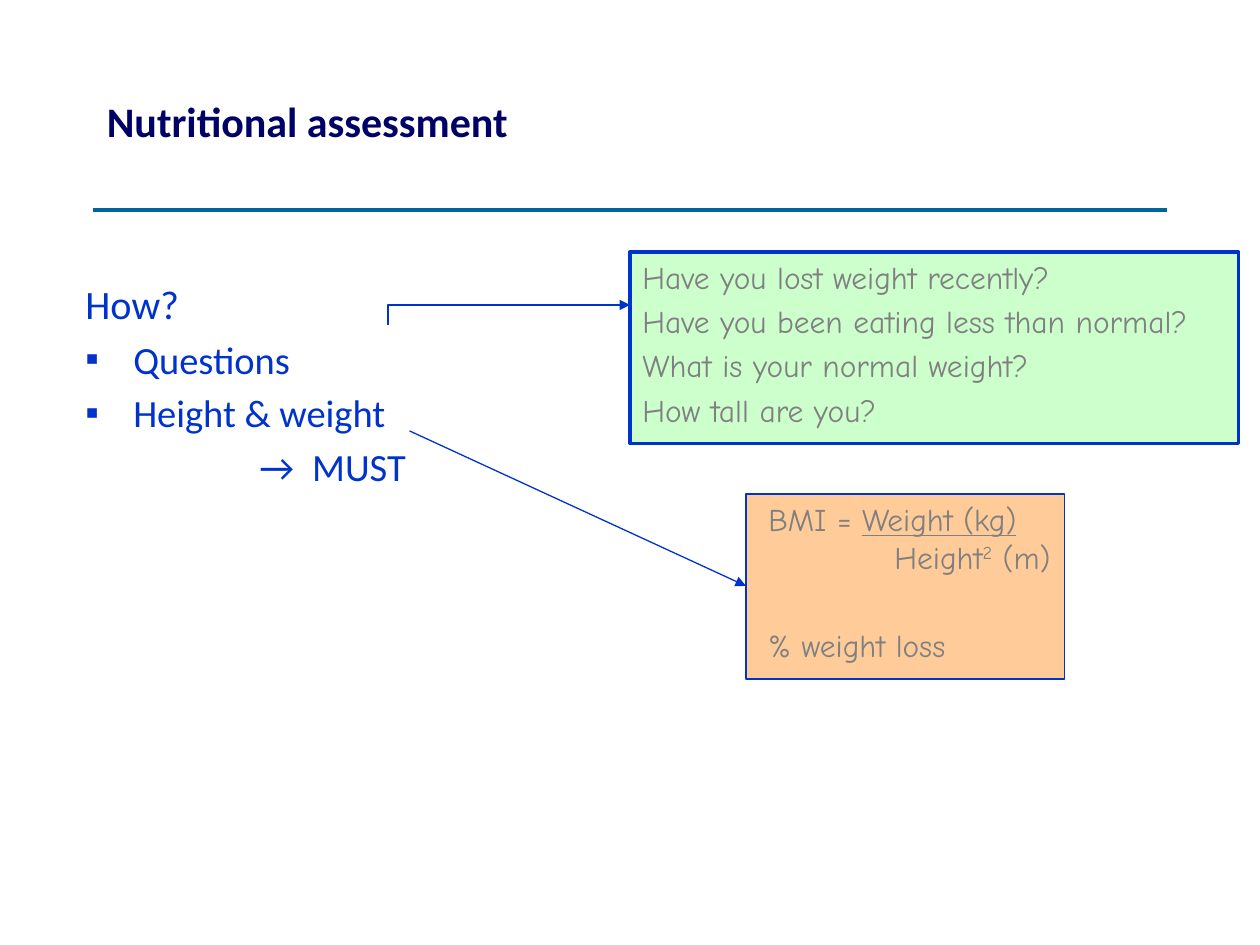
from lxml.etree import SubElement as Sub
from pptx import Presentation
from pptx.dml.color import RGBColor as Rgb
from pptx.enum.shapes import MSO_CONNECTOR as Link, MSO_SHAPE as Form
from pptx.enum.text import MSO_ANCHOR as Anchor, PP_ALIGN as Align
from pptx.oxml.ns import qn
from pptx.util import Inches, Pt

HUES = {
    "navy": "000066",
    "blue": "0033CC",
    "teal": "006699",
    "green": "CCFFCC",
    "peach": "FFCC99",
    "gray": "808080",
}
HEAD = {"name": "Calibri", "size": Pt(24), "bold": True, "hue": "navy"}
LEAD = {"name": "Calibri", "size": Pt(23), "hue": "blue"}
ITEM = LEAD | {"size": Pt(22)}
NOTE = {"name": "Comic Neue", "size": Pt(18), "hue": "gray"}
UNDER = NOTE | {"underline": True}


def color(name):
    """Return the named hue."""
    return Rgb.from_string(HUES[name])


def add_run(para, text, style):
    """Append a styled run and return it."""
    run = para.add_run()
    run.text = text
    for key, value in style.items():
        if key == "hue":
            run.font.color.rgb = color(value)
        else:
            setattr(run.font, key, value)
    return run


def add_para(frame, parts, gap=0, left=0, hang=0, mark=None):
    """Write text parts as the next paragraph of a frame."""
    para = frame.paragraphs[0]
    if para.runs:
        para = frame.add_paragraph()
    para.alignment = Align.LEFT
    para.space_before = Pt(gap)
    props = para._p.get_or_add_pPr()
    props.set("marL", str(Inches(left)))
    props.set("indent", str(Inches(-hang)))
    if mark:
        Sub(props, qn("a:buFont"), typeface="Arial")
        Sub(props, qn("a:buChar"), char=mark)
    for text, style in parts:
        add_run(para, text, style)
    return para


def add_text(slide, box, anchor=Anchor.TOP):
    """Add a wrapping text box and return its frame."""
    frame = slide.shapes.add_textbox(*map(Inches, box)).text_frame
    frame.word_wrap = True
    frame.vertical_anchor = anchor
    return frame


def add_box(slide, box, fill, width):
    """Add an outlined rectangle and return its frame."""
    shape = slide.shapes.add_shape(Form.RECTANGLE, *map(Inches, box))
    shape.shadow.inherit = False
    shape.fill.solid()
    shape.fill.fore_color.rgb = color(fill)
    shape.line.color.rgb = color("blue")
    shape.line.width = Pt(width)
    frame = shape.text_frame
    frame.word_wrap = True
    frame.vertical_anchor = Anchor.TOP
    return frame


def add_line(slide, ends, hue="blue", width=0.75, arrow=True):
    """Add a straight line, with an arrowhead if asked."""
    line = slide.shapes.add_connector(Link.STRAIGHT, *map(Inches, ends))
    line.line.color.rgb = color(hue)
    line.line.width = Pt(width)
    if arrow:
        Sub(line.line._get_or_add_ln(), qn("a:tailEnd"), type="triangle")
    Sub(line._element.spPr, qn("a:effectLst"))
    return line


def add_bend(slide, ends):
    """Add an arrow that goes up, then right."""
    x1, y1, x2, y2 = ends
    midx, midy = (x1 + x2) / 2, (y1 + y2) / 2
    dx, dy = (y1 - y2) / 2, (x2 - x1) / 2
    line = add_line(slide, (midx - dx, midy - dy, midx + dx, midy + dy))
    line._element.spPr.find(qn("a:prstGeom")).set("prst", "bentConnector2")
    line._element.spPr.find(qn("a:xfrm")).set("rot", str(270 * 60000))


def add_steps(slide):
    """Add the list of assessment steps."""
    frame = add_text(slide, (0.58, 2.17, 5, 4.5))
    add_para(frame, [("How?", LEAD)], 4.6, 0.38, 0.38)
    for text in ("Questions", "Height & weight"):
        add_para(frame, [(text, ITEM)], 4.4, 0.38, 0.38, "▪")
    add_para(frame, [("→\tMUST", ITEM)], 4.4, 1.8, 0.42)


def add_asks(slide):
    """Add the box of questions."""
    frame = add_box(slide, (5, 2, 4.83, 1.52), "green", 2.25)
    for text in (
        "Have you lost weight recently?",
        "Have you been eating less than normal?",
        "What is your normal weight?",
        "How tall are you?",
    ):
        add_para(frame, [(text, NOTE)], 3.6, 0.5, 0.5)


def add_sums(slide):
    """Add the box of formulas."""
    frame = add_box(slide, (5.92, 3.92, 2.53, 1.47), "peach", 0.75)
    frame.margin_right = 0
    para = add_para(frame, [("BMI = ", NOTE), ("Weight (kg)", UNDER)], 6, 1.08, 1)
    para.add_line_break()
    add_run(para, "Height", NOTE)
    power = add_run(para, "2", NOTE)
    power.font._element.set("baseline", "30000")
    add_run(para, " (m)", NOTE)
    add_para(frame, [("% weight loss", NOTE)], 29, 0.08)


def main():
    """Build and save the slide."""
    deck = Presentation()
    deck.slide_width, deck.slide_height = Inches(10), Inches(7.5)
    slide = deck.slides.add_slide(deck.slide_layouts[6])
    add_line(slide, (0.74, 1.67, 9.26, 1.67), "teal", 2.25, False)
    title = add_text(slide, (0.75, 0.25, 8.5, 1.42), Anchor.MIDDLE)
    add_para(title, [("Nutritional assessment", HEAD)])
    add_steps(slide)
    add_asks(slide)
    add_bend(slide, (3.08, 2.58, 5, 2.42))
    add_sums(slide)
    add_line(slide, (3.25, 3.42, 5.92, 4.65))
    deck.save("out.pptx")


if __name__ == "__main__":
    main()
